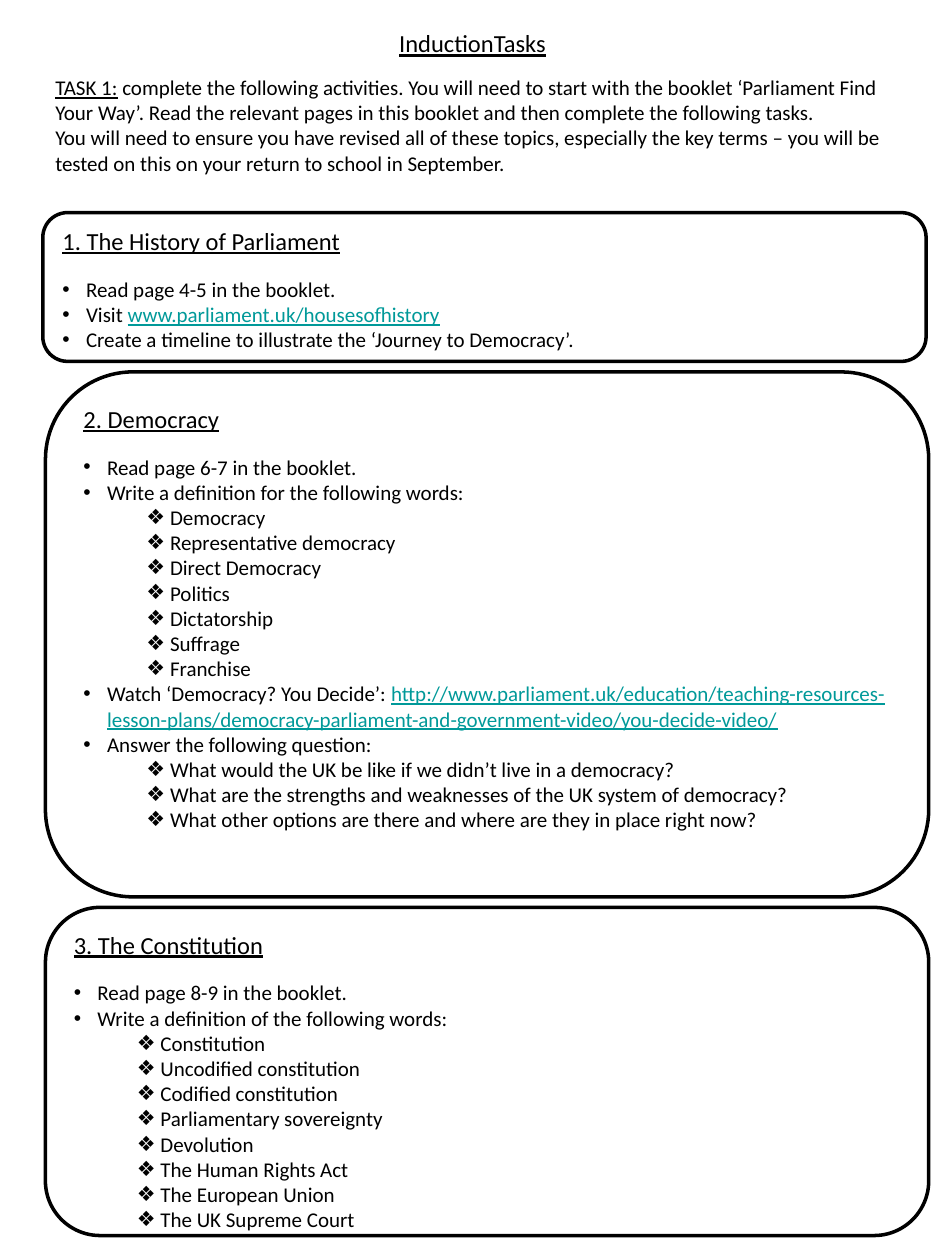
from dataclasses import dataclass
from typing import Optional

from lxml.etree import SubElement
from pptx import Presentation
from pptx.dml.color import RGBColor
from pptx.enum.shapes import MSO_SHAPE
from pptx.enum.text import MSO_ANCHOR, PP_ALIGN
from pptx.oxml.ns import qn
from pptx.util import Pt


@dataclass(frozen=True)
class Theme:
    font: str = "Calibri"
    heading_size: float = 14
    body_size: float = 12
    heading_gap: float = 12
    border: float = 2
    ink: RGBColor = RGBColor(0, 0, 0)
    paper: RGBColor = RGBColor(255, 255, 255)
    link: RGBColor = RGBColor(0, 0x99, 0x99)


@dataclass(frozen=True)
class Bullet:
    mark: str
    margin: float
    level: int


@dataclass(frozen=True)
class Item:
    text: str
    link: str = ""
    terms: tuple[str, ...] = ()


@dataclass(frozen=True)
class Task:
    heading: str
    left: float
    height: float
    items: tuple[Item, ...]


THEME = Theme()
STEP = Bullet("•", 13.5, 0)
TERM = Bullet("❖", 49.5, 1)
HANGING = 13.5
TASK_WIDTH = 504.75
FIRST_TASK_TOP = 121.5
TASK_GAP = 6

TASKS = (
    Task("1. The History of Parliament", 24.5, 85, (
        Item("Read page 4-5 in the booklet."),
        Item("Visit ", "www.parliament.uk/housesofhistory"),
        Item("Create a timeline to illustrate the ‘Journey to Democracy’."),
    )),
    Task("2. Democracy", 26, 300, (
        Item("Read page 6-7 in the booklet."),
        Item("Write a definition for the following words:", terms=(
            "Democracy", "Representative democracy", "Direct Democracy",
            "Politics", "Dictatorship", "Suffrage", "Franchise",
        )),
        Item("Watch ‘Democracy? You Decide’: ",
             "http://www.parliament.uk/education/teaching-resources-lesson-plans/"
             "democracy-parliament-and-government-video/you-decide-video/"),
        Item("Answer the following question:", terms=(
            "What would the UK be like if we didn’t live in a democracy?",
            "What are the strengths and weaknesses of the UK system of democracy?",
            "What other options are there and where are they in place right now?",
        )),
    )),
    Task("3. The Constitution", 26, 187.5, (
        Item("Read page 8-9 in the booklet."),
        Item("Write a definition of the following words:", terms=(
            "Constitution", "Uncodified constitution", "Codified constitution",
            "Parliamentary sovereignty", "Devolution", "The Human Rights Act",
            "The European Union", "The UK Supreme Court",
        )),
    )),
)


def add_words(paragraph, text: str, size: float = THEME.body_size,
              underline: bool = False, color: RGBColor = THEME.ink) -> None:
    run = paragraph.add_run()
    run.text = text
    formats = {"name": THEME.font, "size": Pt(size), "underline": underline}
    for attribute, value in formats.items():
        setattr(run.font, attribute, value)
    run.font.color.rgb = color


def add_line(frame, bullet: Optional[Bullet] = None):
    paragraph = frame.add_paragraph()
    paragraph.alignment = PP_ALIGN.LEFT
    if bullet:
        paragraph.level = bullet.level
        properties = paragraph._p.get_or_add_pPr()
        properties.set("marL", str(Pt(bullet.margin)))
        properties.set("indent", str(-Pt(HANGING)))
        SubElement(properties, qn("a:buFont")).set("typeface", "Arial")
        SubElement(properties, qn("a:buChar")).set("char", bullet.mark)
    return paragraph


def add_text_area(slide, left: float, top: float, width: float, height: float,
                  anchor: MSO_ANCHOR):
    frame = slide.shapes.add_textbox(Pt(left), Pt(top), Pt(width), Pt(height)).text_frame
    frame.word_wrap = True
    frame.vertical_anchor = anchor
    return frame


def add_task(slide, task: Task, top: float) -> None:
    panel = slide.shapes.add_shape(MSO_SHAPE.ROUNDED_RECTANGLE, Pt(task.left), Pt(top),
                                   Pt(TASK_WIDTH), Pt(task.height))
    panel.shadow.inherit = False
    panel.fill.solid()
    panel.fill.fore_color.rgb = THEME.paper
    panel.line.color.rgb = THEME.ink
    panel.line.width = Pt(THEME.border)

    frame = panel.text_frame
    frame.word_wrap = True
    frame.vertical_anchor = MSO_ANCHOR.TOP
    heading = frame.paragraphs[0]
    heading.alignment = PP_ALIGN.LEFT
    heading.space_after = Pt(THEME.heading_gap)
    add_words(heading, task.heading, THEME.heading_size, underline=True)
    for item in task.items:
        step = add_line(frame, STEP)
        add_words(step, item.text)
        if item.link:
            add_words(step, item.link, underline=True, color=THEME.link)
        for term in item.terms:
            add_words(add_line(frame, TERM), term)


def main() -> None:
    presentation = Presentation()
    presentation.slide_width = Pt(540)
    presentation.slide_height = Pt(720)
    slide = presentation.slides.add_slide(presentation.slide_layouts[6])

    title = add_text_area(slide, 27, 9, 486, 31, MSO_ANCHOR.MIDDLE).paragraphs[0]
    title.alignment = PP_ALIGN.CENTER
    add_words(title, "InductionTasks", THEME.heading_size, underline=True)

    intro = add_text_area(slide, 24.5, 39, 489, 65.5, MSO_ANCHOR.TOP)
    activities = intro.paragraphs[0]
    add_words(activities, "TASK 1:", underline=True)
    add_words(activities, " complete the following activities. You will need to start with "
              "the booklet ‘Parliament Find Your Way’. Read the relevant pages in this "
              "booklet and then complete the following tasks.")
    add_words(add_line(intro), "You will need to ensure you have revised all of these topics, "
              "especially the key terms – you will be tested on this on your return to "
              "school in September.")

    top = FIRST_TASK_TOP
    for task in TASKS:
        add_task(slide, task, top)
        top += task.height + TASK_GAP

    presentation.save("out.pptx")


if __name__ == "__main__":
    main()
